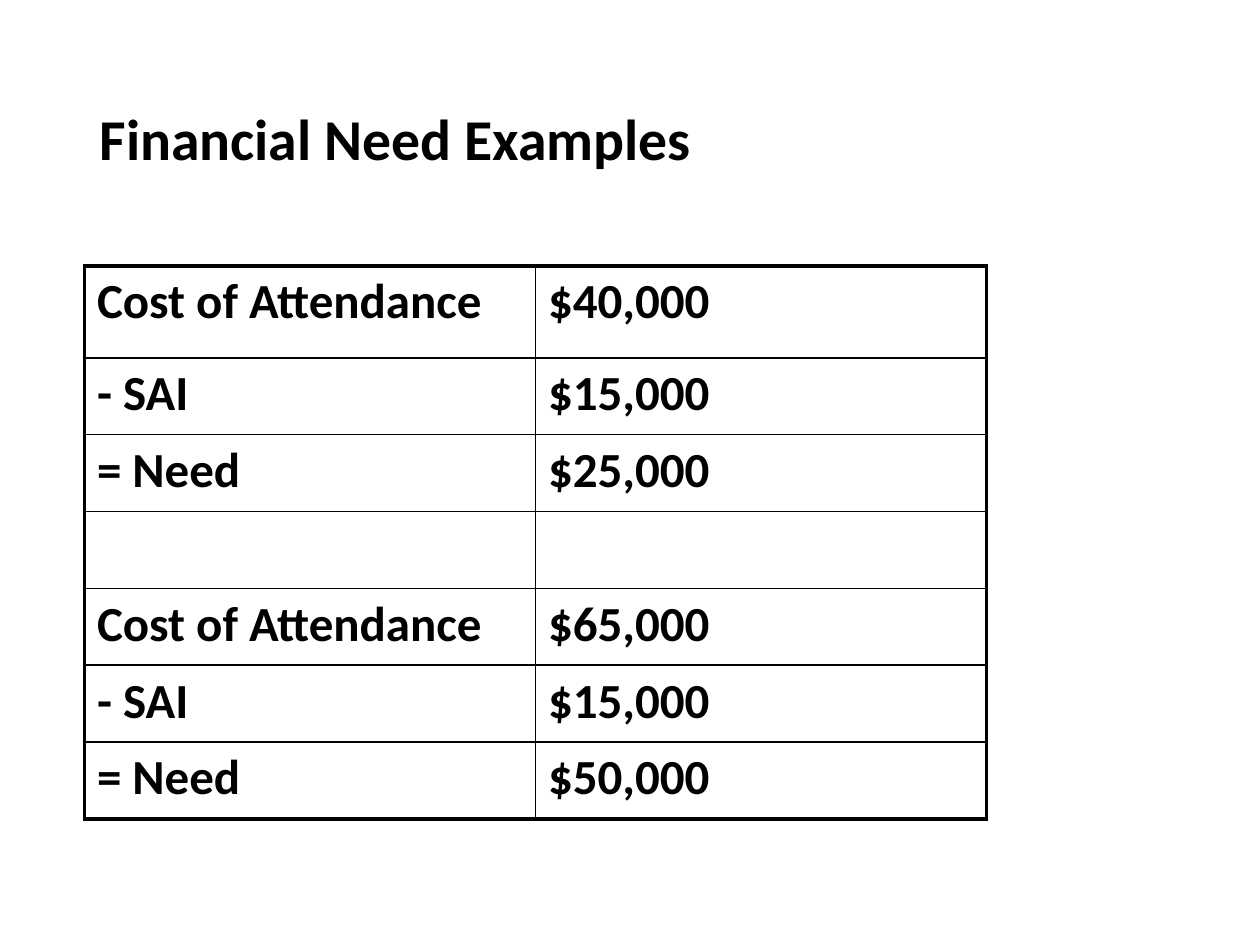
"""Build the slide with two worked examples of financial need."""
import pptx
import pptx.dml.color
import pptx.enum.text
import pptx.oxml.ns
import pptx.util
from lxml import etree

SLIDE_WIDTH, SLIDE_HEIGHT = 10, 7.5
FONT = "Calibri"
INK = "000000"
THIN, THICK = 1, 2.25
COLUMN_WIDTH = 3.58
FIRST_ROW, OTHER_ROW = 0.73, 0.61
EXAMPLES = [
    ("Cost of Attendance", "$40,000"),
    ("- SAI", "$15,000"),
    ("= Need", "$25,000"),
    ("", ""),
    ("Cost of Attendance", "$65,000"),
    ("- SAI", "$15,000"),
    ("= Need", "$50,000"),
]


def color(value):
    """Turn a hex string into a colour."""
    return pptx.dml.color.RGBColor.from_string(value)


def write_text(frame, text, size):
    """Put bold left-aligned text into a text frame."""
    frame.text = text
    paragraph = frame.paragraphs[0]
    paragraph.alignment = pptx.enum.text.PP_ALIGN.LEFT
    for run in paragraph.runs:
        run.font.name = FONT
        run.font.size = pptx.util.Pt(size)
        run.font.bold = True
        run.font.color.rgb = color(INK)
    return paragraph


def add_border(cell, side, width):
    """Draw one side (L, R, T or B) of a cell."""
    qn = pptx.oxml.ns.qn
    properties = cell._tc.get_or_add_tcPr()
    border = etree.SubElement(properties, qn(f"a:ln{side}"), w=str(pptx.util.Pt(width)))
    fill = etree.SubElement(border, qn("a:solidFill"))
    etree.SubElement(fill, qn("a:srgbClr"), val=INK)


def fill_title(slide, text):
    """Place and fill the title placeholder."""
    title = slide.shapes.title
    title.left, title.top, title.width, title.height = map(
        pptx.util.Inches, (0.69, 0.4, 8.62, 1.45))
    frame = title.text_frame
    frame.auto_size = pptx.enum.text.MSO_AUTO_SIZE.NONE
    frame.vertical_anchor = pptx.enum.text.MSO_ANCHOR.MIDDLE
    write_text(frame, text, 33).line_spacing = 0.9


def add_need_table(slide, rows):
    """Add the table with a thick outline and thin inner lines."""
    row_count, column_count = len(rows), len(rows[0])
    height = FIRST_ROW + OTHER_ROW * (row_count - 1)
    table = slide.shapes.add_table(
        row_count, column_count,
        *map(pptx.util.Inches, (0.67, 2.11, COLUMN_WIDTH * column_count, height))).table
    table.first_row = table.horz_banding = False
    for column in table.columns:
        column.width = pptx.util.Inches(COLUMN_WIDTH)
    for r, entries in enumerate(rows):
        table.rows[r].height = pptx.util.Inches(OTHER_ROW if r else FIRST_ROW)
        for c, entry in enumerate(entries):
            cell = table.cell(r, c)
            write_text(cell.text_frame, entry, 28)
            outer_sides = {"L": c == 0, "R": c == column_count - 1,
                           "T": r == 0, "B": r == row_count - 1}
            for side, is_outer in outer_sides.items():
                add_border(cell, side, THICK if is_outer else THIN)
            cell.fill.background()


def main():
    """Build and save the slide."""
    presentation = pptx.Presentation()
    presentation.slide_width = pptx.util.Inches(SLIDE_WIDTH)
    presentation.slide_height = pptx.util.Inches(SLIDE_HEIGHT)
    slide = presentation.slides.add_slide(presentation.slide_layouts.get_by_name("Title Only"))
    fill_title(slide, "Financial Need Examples")
    add_need_table(slide, EXAMPLES)
    presentation.save("out.pptx")


if __name__ == "__main__":
    main()
